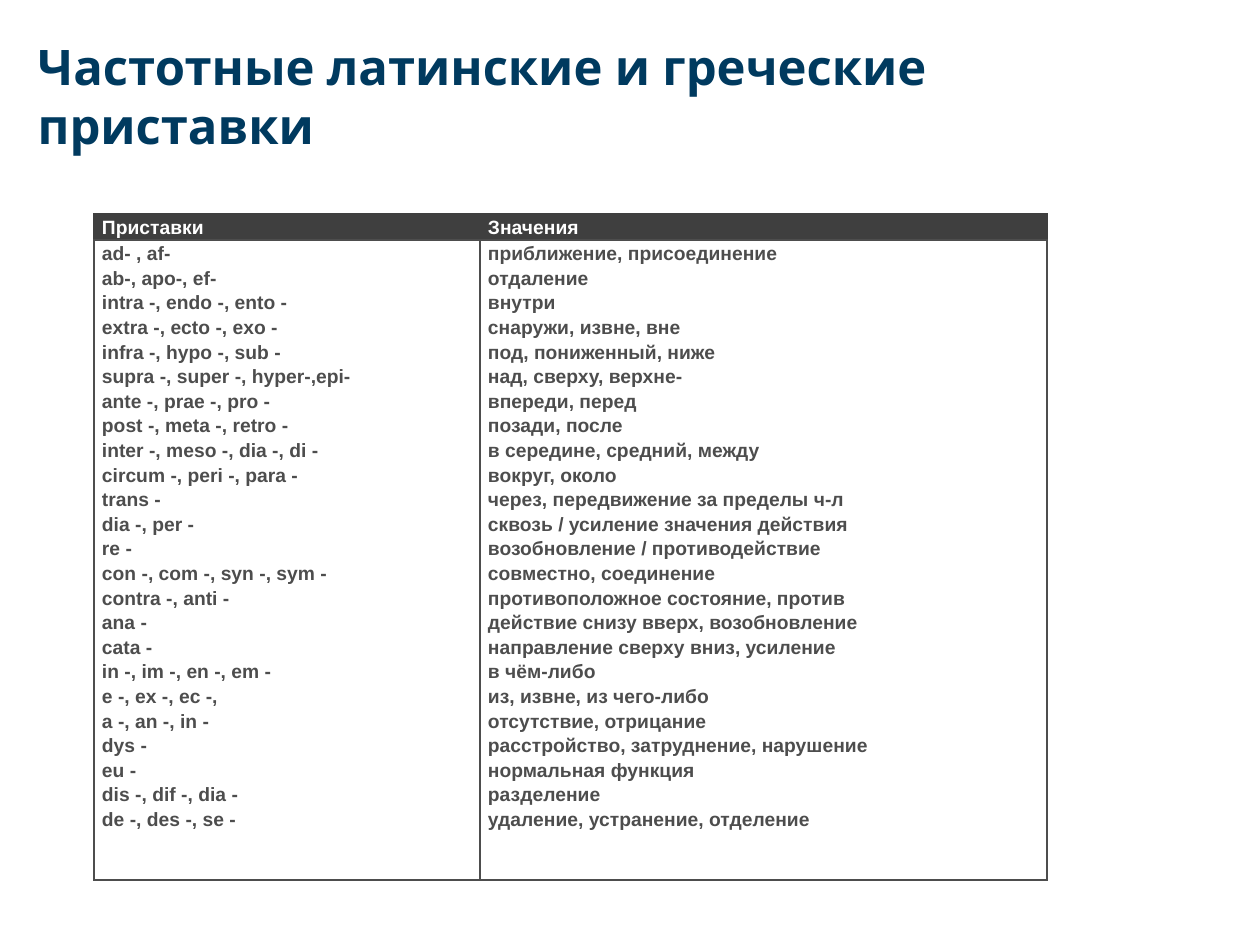
from dataclasses import dataclass

from lxml.etree import SubElement
from pptx import Presentation
from pptx.dml.color import RGBColor
from pptx.enum.text import MSO_ANCHOR, MSO_AUTO_SIZE, PP_ALIGN
from pptx.oxml.ns import qn
from pptx.util import Emu, Pt


@dataclass(frozen=True)
class Theme:
    navy: str = "003A5F"
    dark: str = "3F3F3F"
    gray: str = "4D4D4D"
    white: str = "FFFFFF"
    head_font: str = "Karla"
    body_font: str = "Arial"
    head_size: int = 28
    body_size: int = 11


THEME = Theme()
HEAD = ("Приставки", "Значения")
ROWS = [
    ("ad- , af-", "приближение, присоединение"),
    ("ab-, apo-, ef-", "отдаление"),
    ("intra -, endo -, ento -", "внутри"),
    ("extra -, ecto -, exo -", "снаружи, извне, вне"),
    ("infra -, hypo -, sub -", "под, пониженный, ниже"),
    ("supra -, super -, hyper-,epi-", "над, сверху, верхне-"),
    ("ante -, prae -, pro -", "впереди, перед"),
    ("post -, meta -, retro -", "позади, после"),
    ("inter -, meso -, dia -, di -", "в середине, средний, между"),
    ("circum -, peri -, para -", "вокруг, около"),
    ("trans -", "через, передвижение за пределы ч-л"),
    ("dia -, per -", "сквозь / усиление значения действия"),
    ("re -", "возобновление / противодействие"),
    ("con -, com -, syn -, sym -", "совместно, соединение"),
    ("contra -, anti -", "противоположное состояние, против"),
    ("ana -", "действие снизу вверх, возобновление"),
    ("cata -", "направление сверху вниз, усиление"),
    ("in -, im -, en -, em -", "в чём-либо"),
    ("e -, ex -, ec -,", "из, извне, из чего-либо"),
    ("a -, an -, in -", "отсутствие, отрицание"),
    ("dys -", "расстройство, затруднение, нарушение"),
    ("eu -", "нормальная функция"),
    ("dis -, dif -, dia -", "разделение"),
    ("de -, des -, se -", "удаление, устранение, отделение"),
]


def px(n):
    return Emu(round(n * 914400 / 126))


def style(par, font, size, color):
    par.font.name = font
    par.font.size = Pt(size)
    par.font.bold = True
    par.font.color.rgb = RGBColor.from_string(color)


def add_title(slide, text):
    title = slide.shapes.title
    title.left, title.top, title.width, title.height = map(px, (25, 76, 1081, 98))
    frame = title.text_frame
    frame.text = text
    frame.word_wrap = True
    frame.auto_size = MSO_AUTO_SIZE.NONE
    frame.vertical_anchor = MSO_ANCHOR.MIDDLE
    # The deep lower inset lifts the text above the middle of the box
    frame.margin_top, frame.margin_bottom = px(6), px(65)
    par = frame.paragraphs[0]
    par.alignment = PP_ALIGN.LEFT
    style(par, THEME.head_font, THEME.head_size, THEME.navy)


def set_edge(cell, side, color, width):
    props = cell._tc.get_or_add_tcPr()
    line = SubElement(props, qn(f"a:ln{side}"), w=str(Pt(width)))
    fill = SubElement(line, qn("a:solidFill"))
    SubElement(fill, qn("a:srgbClr"), val=color)


def fill_cell(cell, lines, color, back, edges):
    # Edges come before the fill in the cell properties
    for side, edge in zip("LRTB", edges):
        set_edge(cell, side, *edge)
    cell.fill.solid()
    cell.fill.fore_color.rgb = RGBColor.from_string(back)
    cell.margin_left = cell.margin_right = px(8)
    cell.margin_top = cell.margin_bottom = 0
    cell.text = "\n".join(lines)
    for par in cell.text_frame.paragraphs:
        par.alignment = PP_ALIGN.JUSTIFY
        par.line_spacing = 1.15
        style(par, THEME.body_font, THEME.body_size, color)


def add_grid(slide, left, top, widths, heights):
    table = slide.shapes.add_table(
        2, 2, px(left), px(top), px(sum(widths)), px(sum(heights))
    ).table
    table.horz_banding = False
    for col, width in zip(table.columns, widths):
        col.width = px(width)
    for row, height in zip(table.rows, heights):
        row.height = px(height)

    thin, thick = (THEME.dark, 0.75), (THEME.gray, 1)
    for i, (name, lines) in enumerate(zip(HEAD, zip(*ROWS))):
        fill_cell(table.cell(0, i), [name], THEME.white, THEME.dark,
                  [thin] * 3 + [thick])
        fill_cell(table.cell(1, i), lines, THEME.gray, THEME.white, [thick] * 4)


def main():
    deck = Presentation()
    deck.slide_width, deck.slide_height = px(1260), px(945)
    slide = deck.slides.add_slide(deck.slide_layouts[5])
    add_title(slide, "Частотные латинские и греческие приставки")
    add_grid(slide, 94, 214, (386, 567), (26, 640))
    deck.save("out.pptx")


if __name__ == "__main__":
    main()
